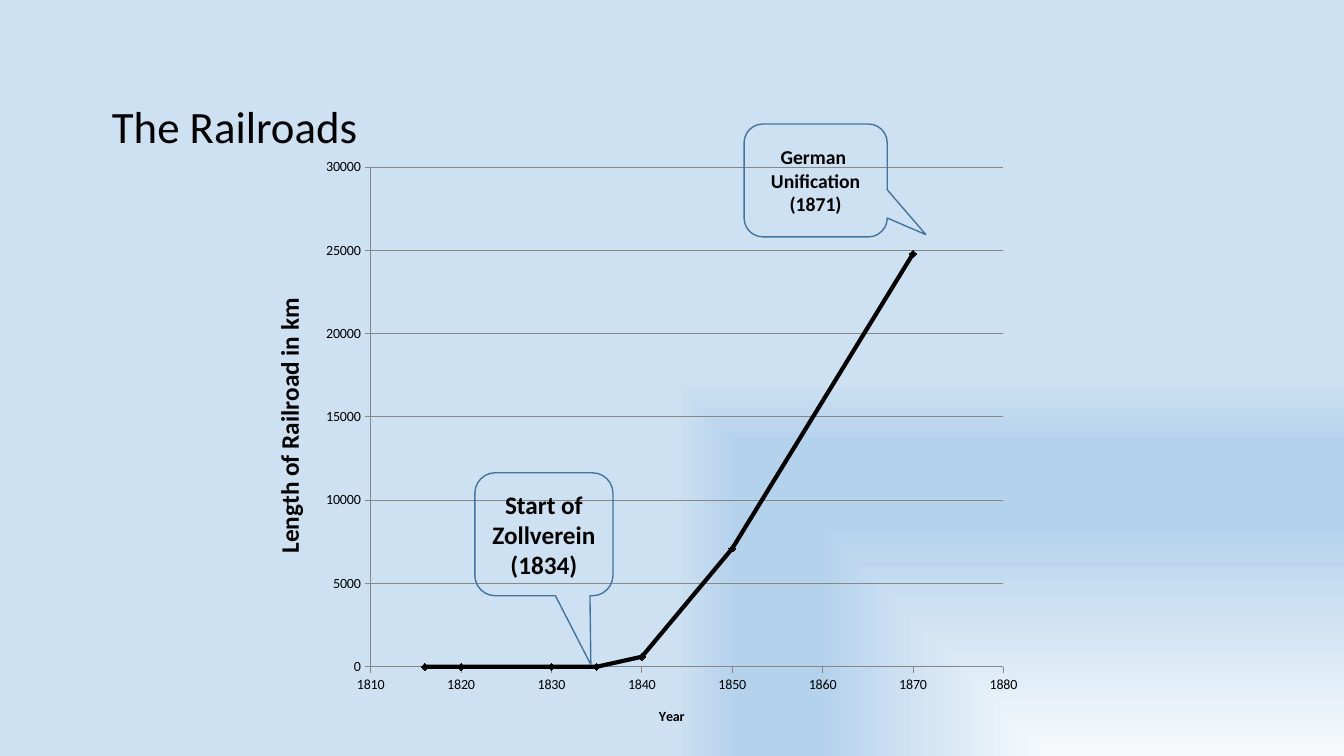
"""Build a slide charting German railroad length from 1816 to 1870."""
from dataclasses import dataclass

from lxml import etree
from pptx import Presentation
from pptx import util as u
from pptx.chart import data as chart_data
from pptx.dml import color
from pptx.enum import chart as ch, shapes, text
from pptx.oxml import ns


@dataclass(frozen=True)
class Theme:
    font: str = "Calibri"
    ink: color.RGBColor = color.RGBColor(0, 0, 0)
    grid: color.RGBColor = color.RGBColor(0x87, 0x87, 0x87)
    outline: color.RGBColor = color.RGBColor(0x43, 0x73, 0x9E)
    backdrop: tuple = ((0, "F7FAFD"), (61, "B5D2EC"), (83, "B5D2EC"), (100, "CEE1F2"))
    title: int = 32
    label: int = 18
    note: int = 14
    tick: int = 10


theme = Theme()


def set_font(font, size, bold=False):
    font.name, font.size, font.bold = theme.font, u.Pt(size), bold
    font.color.rgb = theme.ink


deck = Presentation()
deck.slide_width, deck.slide_height = u.Inches(13.33), u.Inches(7.5)
slide = deck.slides.add_slide(deck.slide_layouts[5])

slide.background.fill.gradient()
gradient = slide.background._cSld.find(".//" + ns.qn("a:gradFill"))
for part in list(gradient):
    gradient.remove(part)
stops = etree.SubElement(gradient, ns.qn("a:gsLst"))
for percent, shade in theme.backdrop:
    stop = etree.SubElement(stops, ns.qn("a:gs"), pos=str(percent * 1000))
    etree.SubElement(stop, ns.qn("a:srgbClr"), val=shade)
spread = etree.SubElement(gradient, ns.qn("a:path"), path="rect")
etree.SubElement(spread, ns.qn("a:fillToRect"), l="100000", t="100000")

heading = slide.shapes.title
heading.left, heading.top = u.Inches(1.01), u.Inches(0.37)
heading.width, heading.height = u.Inches(10.14), u.Inches(1.25)
heading.text_frame.text = "The Railroads"
heading.text_frame.vertical_anchor = text.MSO_ANCHOR.BOTTOM
for side in ("left", "top", "right", "bottom"):
    setattr(heading.text_frame, f"margin_{side}", u.Inches(0.1))
heading_line = heading.text_frame.paragraphs[0]
heading_line.alignment = text.PP_ALIGN.LEFT
heading_line.line_spacing = 0.9
set_font(heading_line.font, theme.title)

railroad_km = {1816: 0, 1820: 0, 1830: 0, 1835: 0, 1840: 600, 1850: 7100, 1870: 24800}
growth = chart_data.XyChartData()
points = growth.add_series("Series 1")
for year, km in railroad_km.items():
    points.add_data_point(year, km)
chart = slide.shapes.add_chart(
    ch.XL_CHART_TYPE.XY_SCATTER_LINES,
    u.Inches(2.65), u.Inches(1.23), u.Inches(7.72), u.Inches(6.12), growth).chart
chart.has_legend = chart.has_title = False
set_font(chart.font, theme.tick)
chart.plots[0].vary_by_categories = False

railroads = chart.plots[0].series[0]
railroads.smooth = False
railroads.format.line.color.rgb = theme.ink
railroads.format.line.width = u.Pt(3)
railroads.marker.style = ch.XL_MARKER_STYLE.DIAMOND
railroads.marker.size = 5
railroads.marker.format.fill.solid()
railroads.marker.format.fill.fore_color.rgb = theme.ink
railroads.marker.format.line.color.rgb = theme.ink

axes = (
    (chart.category_axis, "Year", theme.tick, 1810, 1880, 10),
    (chart.value_axis, "Length of Railroad in km", theme.label, 0, 30000, 5000),
)
for axis, caption, size, low, high, step in axes:
    axis.minimum_scale, axis.maximum_scale, axis.major_unit = low, high, step
    axis.major_tick_mark = ch.XL_TICK_MARK.OUTSIDE
    axis.minor_tick_mark = ch.XL_TICK_MARK.NONE
    axis.format.line.color.rgb = theme.grid
    axis.tick_labels.number_format = "General"
    axis.tick_labels.number_format_is_linked = False
    axis.axis_title.text_frame.text = caption
    set_font(axis.axis_title.text_frame.paragraphs[0].font, size, bold=True)
chart.category_axis.has_major_gridlines = False
chart.value_axis.has_major_gridlines = True
chart.value_axis.major_gridlines.format.line.color.rgb = theme.grid

plot_area = chart._chartSpace.find(".//" + ns.qn("c:plotArea"))
for automatic in plot_area.findall(ns.qn("c:layout")):
    plot_area.remove(automatic)
layout = etree.Element(ns.qn("c:layout"))
plot_area.insert(0, layout)
manual = etree.SubElement(layout, ns.qn("c:manualLayout"))
for tag, value in (("layoutTarget", "inner"), ("xMode", "edge"), ("yMode", "edge"),
                   ("x", "0.133"), ("y", "0.07"), ("w", "0.813"), ("h", "0.81")):
    etree.SubElement(manual, ns.qn(f"c:{tag}"), val=value)

milestones = (
    ("Start of Zollverein\v(1834)", theme.label, (4.71, 4.69, 1.37, 1.22), (0.34, 1.06)),
    ("German \vUnification (1871)", theme.note, (7.38, 1.23, 1.42, 1.12), (0.77, 0.48)),
)
for wording, size, place, tip in milestones:
    callout = slide.shapes.add_shape(
        shapes.MSO_SHAPE.ROUNDED_RECTANGULAR_CALLOUT, *map(u.Inches, place))
    callout.adjustments[0], callout.adjustments[1] = tip
    callout.shadow.inherit = False
    callout.fill.background()
    callout.line.color.rgb = theme.outline
    callout.line.width = u.Pt(1)
    callout.text_frame.word_wrap = True
    callout.text_frame.vertical_anchor = text.MSO_ANCHOR.MIDDLE
    callout.text_frame.text = wording
    milestone = callout.text_frame.paragraphs[0]
    milestone.alignment = text.PP_ALIGN.CENTER
    set_font(milestone.font, size, bold=True)

deck.save("out.pptx")
